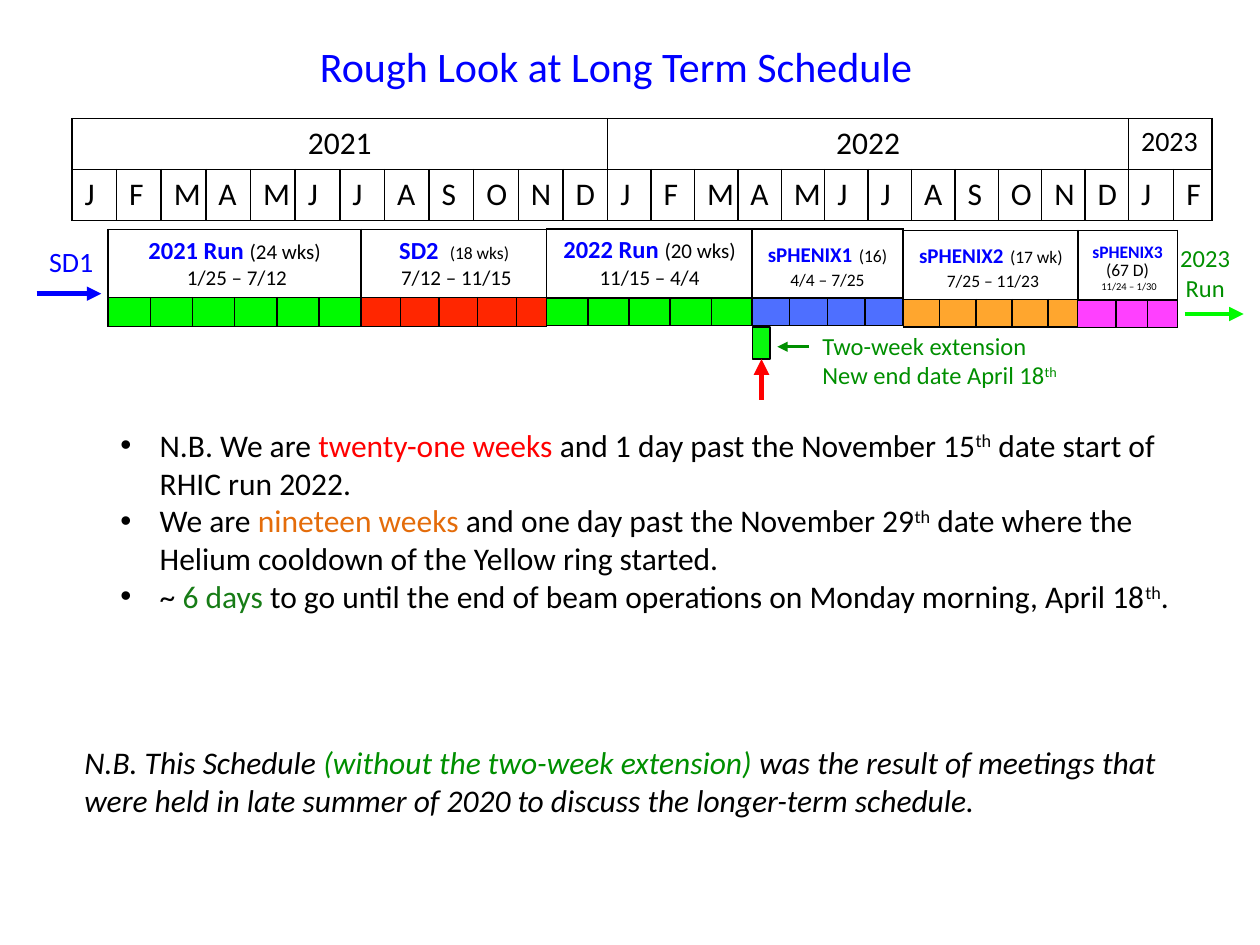
"""Build the long-term run schedule slide with its calendar, run blocks and notes."""
from lxml import etree
from pptx import Presentation
from pptx.dml.color import RGBColor
from pptx.enum import shapes, text
from pptx.oxml import ns
from pptx.util import Cm, Pt

COLOURS = {
    "black": "000000", "blue": "0000FF", "red": "FF0000", "green": "008F00",
    "lime": "00FA00", "scarlet": "FF2600", "azure": "0432FF", "amber": "FF9300",
    "magenta": "FF40FF", "extension": "08F90D", "orange": "E46C0A", "leaf": "177C16",
}
RGB = {name: RGBColor.from_string(value) for name, value in COLOURS.items()}
CENTER, LEFT = text.PP_ALIGN.CENTER, text.PP_ALIGN.LEFT


def write(frame, paragraphs, align=LEFT, spacing=None):
    """Fill a text frame with paragraphs of (wording, size, colour, style) runs."""
    for index, runs in enumerate(paragraphs):
        paragraph = frame.paragraphs[0] if index == 0 else frame.add_paragraph()
        paragraph.alignment = align
        if spacing:
            paragraph.line_spacing = spacing
        for wording, size, colour, *style in runs:
            run = paragraph.add_run()
            run.text = wording
            run.font.name = "Calibri"
            run.font.size = Pt(size)
            run.font.color.rgb = RGB[colour]
            run.font.bold = "bold" in style
            run.font.italic = "italic" in style
            if "super" in style:
                run._r.get_or_add_rPr().set("baseline", "30000")


def add_grid(left, top, widths, heights):
    """Add a plain table with thin black borders and small empty cells."""
    grid = slide.shapes.add_table(
        len(heights), len(widths), Cm(left), Cm(top), Cm(sum(widths)), Cm(sum(heights))
    ).table
    grid.first_row = grid.horz_banding = False
    for column, width in zip(grid.columns, widths):
        column.width = Cm(width)
    for row, height in zip(grid.rows, heights):
        row.height = Cm(height)
    for cell in grid.iter_cells():
        properties = cell._tc.get_or_add_tcPr()
        for side in ("lnL", "lnR", "lnT", "lnB"):
            border = etree.SubElement(properties, ns.qn(f"a:{side}"), w=str(Pt(1)))
            ink = etree.SubElement(border, ns.qn("a:solidFill"))
            etree.SubElement(ink, ns.qn("a:srgbClr"), val=COLOURS["black"])
        cell.fill.background()
        cell.text_frame.paragraphs[0]._p.get_or_add_endParaRPr().set("sz", "600")
    return grid


deck = Presentation()
deck.slide_width, deck.slide_height = Cm(25.4), Cm(19.05)
slide = deck.slides.add_slide(deck.slide_layouts[6])

years = [("2021", 18, CENTER, [0.9] * 12), ("2022", 18, CENTER, [10.5 / 12] * 12),
         ("2023", 16, LEFT, [0.91, 0.77])]
month_widths = [width for year in years for width in year[3]]
calendar = add_grid(1.45, 2.39, month_widths, [1.03, 1.03])
first = 0
for year, size, align, widths in years:
    heading = calendar.cell(0, first)
    heading.merge(calendar.cell(0, first + len(widths) - 1))
    write(heading.text_frame, [[(year, size, "black")]], align)
    for month, initial in enumerate("JFMAMJJASOND"[:len(widths)]):
        write(calendar.cell(1, first + month).text_frame, [[(initial, 18, "black")]])
    first += len(widths)

blocks = [
    (2.18, 4.63, [0.85] * 6, [1.36, 0.58], "lime", 100, None,
     [[("2021 Run ", 14, "blue", "bold"), ("(24 wks)", 12, "black")],
      [(" 1/25 – 7/12", 12, "black")]]),
    (11.02, 4.62, [0.83] * 5, [1.39, 0.55], "lime", 100, None,
     [[("2022 Run ", 14, "blue", "bold"), ("(20 wks) 11/15 – 4/4", 12, "black")]]),
    (7.29, 4.63, [0.78] * 4 + [0.59], [1.36, 0.58], "scarlet", 100, None,
     [[("SD2  ", 14, "blue", "bold"), ("(18 wks)", 10, "black")],
      [(" 7/12 – 11/15", 12, "black")]]),
    (15.16, 4.62, [0.76] * 4, [1.39, 0.55], "azure", 70, None,
     [[("sPHENIX1", 12, "blue", "bold"), (" ", 16, "blue", "bold"),
       ("(16) 4/4 – 7/25", 10, "black")]]),
    (18.21, 4.65, [0.73] * 4 + [0.58], [1.39, 0.55], "amber", 82, None,
     [[("sPHENIX2", 12, "blue", "bold"), (" ", 16, "blue", "bold"),
       ("(17 wk)", 10, "black")], [(" 7/25 – 11/23", 10, "black")]]),
    (21.72, 4.65, [0.78, 0.63, 0.6], [1.39, 0.55], "magenta", 100, 0.78,
     [[("sPHENIX3", 10, "blue", "bold"), (" ", 16, "blue", "bold"),
       ("(67 D)", 10, "black")], [(" ", 8, "black"), ("11/24 – 1/30", 6, "black")]]),
]
for left, top, widths, heights, colour, opacity, spacing, label in blocks:
    block = add_grid(left, top, widths, heights)
    block.cell(0, 0).merge(block.cell(0, len(widths) - 1))
    write(block.cell(0, 0).text_frame, label, CENTER, spacing)
    for month in range(len(widths)):
        cell = block.cell(1, month)
        cell.margin_top = cell.margin_bottom = 0
        cell.fill.solid()
        cell.fill.fore_color.rgb = RGB[colour]
        if opacity < 100:
            tint = cell._tc.tcPr.find(ns.qn("a:solidFill")).find(ns.qn("a:srgbClr"))
            etree.SubElement(tint, ns.qn("a:alpha"), val=str(opacity * 1000))

extension = slide.shapes.add_shape(
    shapes.MSO_SHAPE.RECTANGLE, Cm(15.17), Cm(6.6), Cm(0.36), Cm(0.64))
extension.shadow.inherit = False
extension.fill.solid()
extension.fill.fore_color.rgb = RGB["extension"]
extension.line.color.rgb = RGB["black"]
extension.line.width = Pt(1)

arrows = [
    (0.74, 5.92, 2.04, 5.92, "blue", 2.75, None),
    (23.88, 6.33, 25.07, 6.33, "lime", 2.75, None),
    (15.35, 8.06, 15.35, 7.24, "red", 3, extension),
    (16.31, 6.99, 15.67, 6.99, "green", 1.5, None),
]
for x1, y1, x2, y2, colour, weight, target in arrows:
    arrow = slide.shapes.add_connector(
        shapes.MSO_CONNECTOR.STRAIGHT, Cm(x1), Cm(y1), Cm(x2), Cm(y2))
    if target:
        arrow.end_connect(target, 2)
    arrow.line.color.rgb = RGB[colour]
    arrow.line.width = Pt(weight)
    etree.SubElement(arrow.line._get_or_add_ln(), ns.qn("a:tailEnd"), type="triangle")
    etree.SubElement(arrow._element.spPr, ns.qn("a:effectLst"))

notes = [
    [("N.B. We are ", 18, "black"), ("twenty-one weeks ", 18, "red"),
     ("and 1 day past the November 15", 18, "black"), ("th", 18, "black", "super"),
     (" date start of RHIC run 2022.", 18, "black")],
    [("We are ", 18, "black"), ("nineteen weeks ", 18, "orange"),
     ("and one day past the November 29", 18, "black"), ("th", 18, "black", "super"),
     (" date where the Helium cooldown of the Yellow ring started.", 18, "black")],
    [("~ ", 18, "black"), ("6 days ", 18, "leaf"),
     ("to go until the end of beam operations on Monday morning, April 18", 18, "black"),
     ("th", 18, "black", "super"), (".", 18, "black")],
]
origin = [
    [("N.B. This Schedule ", 18, "black", "italic"),
     ("(without the two-week extension)", 18, "green", "italic"),
     (" was the result of meetings that were held in late summer of 2020 "
      "to discuss the longer-term schedule.", 18, "black", "italic")],
]
extension_note = [
    [("Two-week extension", 14, "green")],
    [("New end date April 18", 14, "green"), ("th", 14, "green", "super")],
]
passages = [
    (6.2, 0.69, 13.03, 1.27, LEFT,
     [[("Rough Look at Long Term Schedule", 24, "blue")]]),
    (0.74, 4.8, 1.42, 0.94, LEFT, [[("SD1", 16, "blue")]]),
    (23.37, 4.78, 1.85, 1.45, CENTER, [[("2023", 14, "green")], [("Run", 14, "green")]]),
    (16.33, 6.55, 7.37, 1.45, LEFT, extension_note),
    (2.18, 8.46, 22.17, 4.11, LEFT, notes),
    (1.45, 14.86, 22.68, 1.8, LEFT, origin),
]
for left, top, width, height, align, paragraphs in passages:
    passage = slide.shapes.add_textbox(Cm(left), Cm(top), Cm(width), Cm(height))
    frame = passage.text_frame
    frame.word_wrap = width > 1.5
    frame.auto_size = text.MSO_AUTO_SIZE.SHAPE_TO_FIT_TEXT
    write(frame, paragraphs, align)
    if paragraphs is notes:
        for paragraph in frame.paragraphs:
            layout = paragraph._p.get_or_add_pPr()
            layout.set("marL", str(Cm(0.79)))
            layout.set("indent", str(-Cm(0.79)))
            etree.SubElement(layout, ns.qn("a:buFont"), typeface="Arial")
            etree.SubElement(layout, ns.qn("a:buChar"), char="•")

deck.save("out.pptx")
